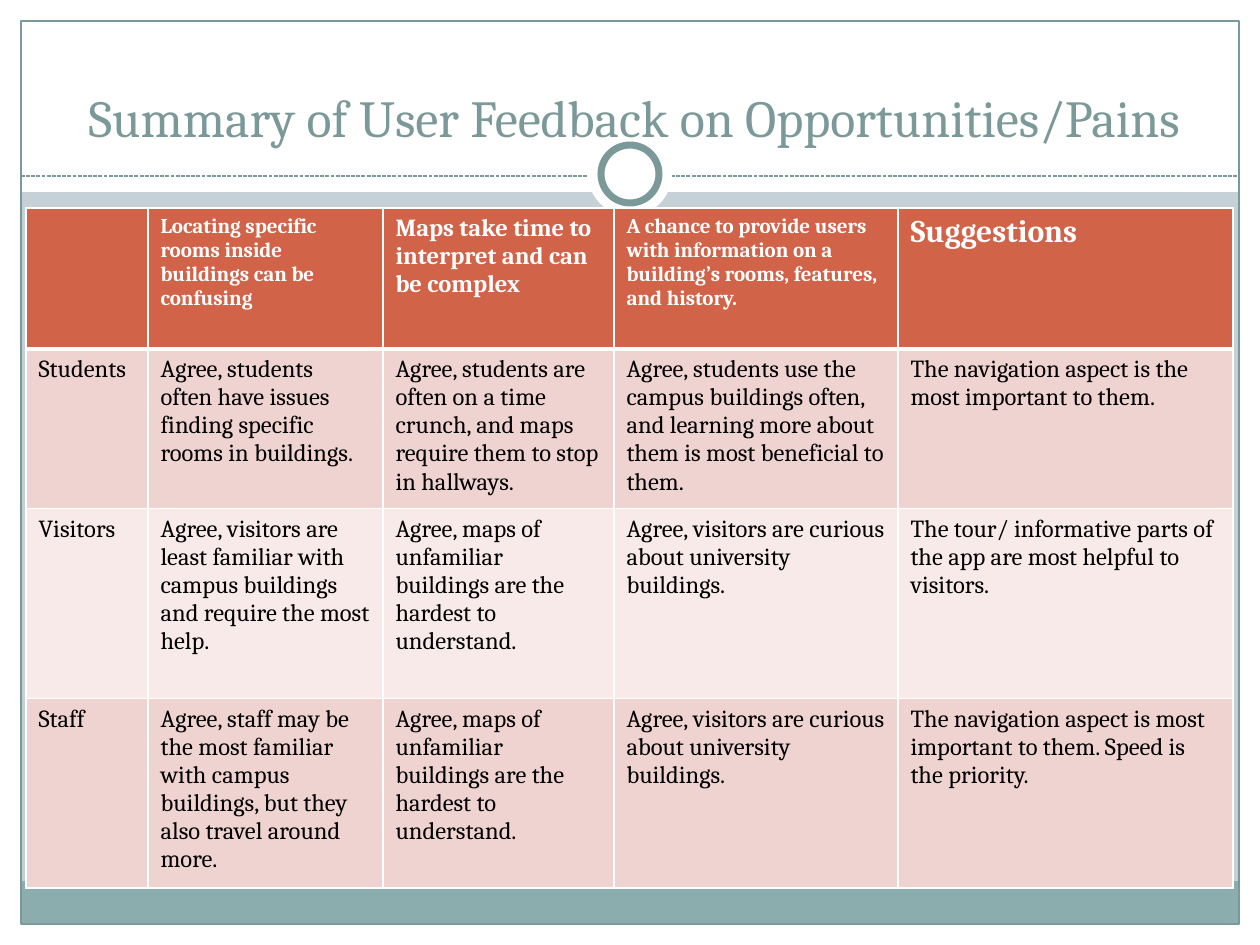
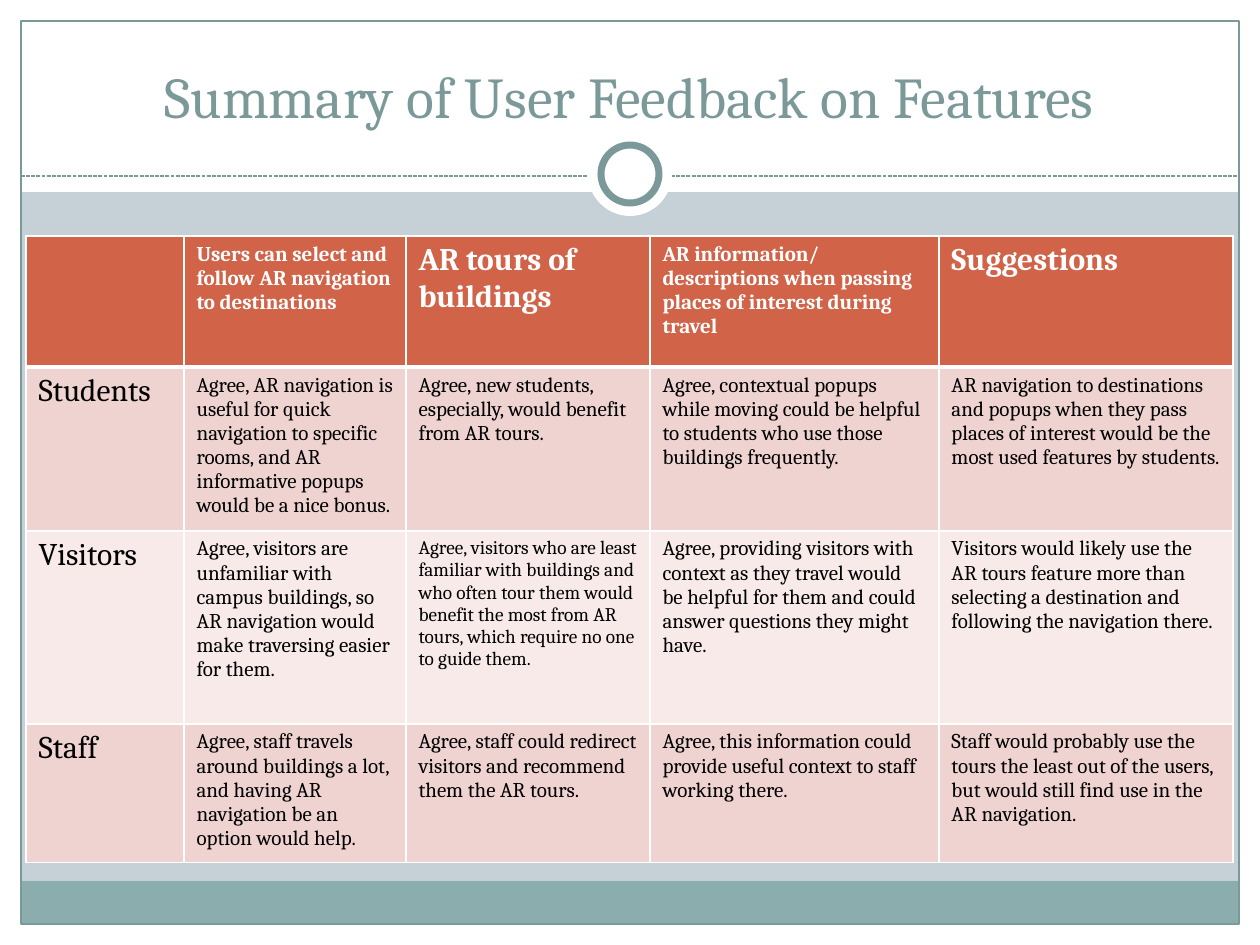
"""Build two slides that sum up user feedback in tables."""
from lxml import etree
from pptx import Presentation
from pptx.dml.color import RGBColor
from pptx.enum.dml import MSO_LINE
from pptx.enum.shapes import MSO_CONNECTOR, MSO_SHAPE
from pptx.enum.text import MSO_ANCHOR, PP_ALIGN
from pptx.oxml.ns import qn
from pptx.util import Pt

RECTANGLE, OVAL = MSO_SHAPE.RECTANGLE, MSO_SHAPE.OVAL
STRAIGHT, DASHED = MSO_CONNECTOR.STRAIGHT, MSO_LINE.SQUARE_DOT
BOTTOM, CENTER = MSO_ANCHOR.BOTTOM, PP_ALIGN.CENTER

FONT = "Cambria"
WHITE, BLACK = "FFFFFF", "000000"
BACKGROUND, TEAL, FOOTER = "C5D1D7", "7C999A", "8CADAE"
HEADER, ODD_ROW, EVEN_ROW = "D16349", "EED3D0", "F7EAE9"

EMU_PER_PX = 914400 / 126
WIDTH, HEIGHT = 1260, 945
MARGIN = 21
TITLE_BAND, RULE_Y = 192, 176
FOOTER_TOP, FOOTER_HEIGHT = 881, 43
RING_Y, DISC_SIZE, RING_SIZE = 174, 84, 58
TITLE_WIDTH, TITLE_HEIGHT = 1176, 105
TABLE_LEFT = 26

SLIDES = [
    {
        "title": "Summary of User Feedback on Opportunities/Pains",
        "title_size": 29.7,
        "title_at": (47, 49),
        "table_top": 208,
        "columns": [122, 235, 231, 284, 335],
        "rows": [141, 153, 190, 182],
        "header_sizes": [12, 12, 14, 12, 18],
        "label_size": 14,
        "body_size": 14,
        "special_sizes": {},
        "cells": [
            ["",
             "Locating specific rooms inside buildings can be confusing",
             "Maps take time to interpret and can be complex",
             "A chance to provide users with information on a building’s rooms, features, and history.",
             "Suggestions"],
            ["Students",
             "Agree, students often have issues finding specific rooms in buildings.",
             "Agree, students are often on a time crunch, and maps require them to stop in hallways.",
             "Agree, students use the campus buildings often, and learning more about them is most beneficial to them.",
             "The navigation aspect is the most important to them."],
            ["Visitors",
             "Agree, visitors are least familiar with campus buildings and require the most help.",
             "Agree, maps of unfamiliar buildings are the hardest to understand.",
             "Agree, visitors are curious about university buildings.",
             "The tour/ informative parts of the app are most helpful to visitors."],
            ["Staff",
             "Agree, staff may be the most familiar with campus buildings, but they also travel around more.",
             "Agree, maps of unfamiliar buildings are the hardest to understand.",
             "Agree, visitors are curious about university buildings.",
             "The navigation aspect is most important to them. Speed is the priority."],
        ],
    },
    {
        "title": "Summary of User Feedback on Features",
        "title_size": 33,
        "title_at": (41, 31),
        "table_top": 236,
        "columns": [158, 222, 244, 289, 294],
        "rows": [131, 158, 193, 134],
        "header_sizes": [12, 12, 18, 12, 18],
        "label_size": 18,
        "body_size": 12,
        "special_sizes": {(2, 2): 11},
        "cells": [
            ["",
             "Users can select and follow AR navigation to destinations",
             "AR tours of buildings",
             "AR information/ descriptions when passing places of interest during travel",
             "Suggestions"],
            ["Students",
             "Agree, AR navigation is useful for quick navigation to specific rooms, and AR informative popups would be a nice bonus.",
             "Agree, new students, especially, would benefit from AR tours.",
             "Agree, contextual popups while moving could be helpful to students who use those buildings frequently.",
             "AR navigation to destinations and popups when they pass places of interest would be the most used features by students."],
            ["Visitors",
             "Agree, visitors are unfamiliar with campus buildings, so AR navigation would make traversing easier for them.",
             "Agree, visitors who are least familiar with buildings and who often tour them would benefit the most from AR tours, which require no one to guide them.",
             "Agree, providing visitors with context as they travel would be helpful for them and could answer questions they might have.",
             "Visitors would likely use the AR tours feature more than selecting a destination and following the navigation there."],
            ["Staff",
             "Agree, staff travels around buildings a lot, and having AR navigation be an option would help.",
             "Agree, staff could redirect visitors and recommend them the AR tours.",
             "Agree, this information could provide useful context to staff working there.",
             "Staff would probably use the tours the least out of the users, but would still find use in the AR navigation."],
        ],
    },
]


def px(*lengths):
    return [round(length * EMU_PER_PX) for length in lengths]


def color(value):
    return RGBColor.from_string(value)


def paint(fill, value):
    fill.solid()
    fill.fore_color.rgb = color(value)


def stroke(line, value, width):
    line.color.rgb = color(value)
    line.width = Pt(width)


def style(paragraph, size, value, bold=False):
    font = paragraph.font
    font.name, font.size, font.bold = FONT, Pt(size), bold
    font.color.rgb = color(value)


def add_block(page, kind, frame, fill=None, line=None, line_width=0.75):
    shape = page.shapes.add_shape(kind, *px(*frame))
    shape.shadow.inherit = False
    if fill:
        paint(shape.fill, fill)
    else:
        shape.fill.background()
    if line:
        stroke(shape.line, line, line_width)
    else:
        shape.line.fill.background()


def add_disc(page, size, **look):
    add_block(page, OVAL, ((WIDTH - size) / 2, RING_Y - size / 2, size, size), **look)


def add_backdrop(page):
    paint(page.background.fill, BACKGROUND)
    inner_width = WIDTH - 2 * MARGIN
    for frame in [
        (0, HEIGHT - MARGIN, WIDTH, MARGIN),
        (0, 0, WIDTH, TITLE_BAND),
        (0, 0, MARGIN, HEIGHT),
        (WIDTH - MARGIN, 0, MARGIN, HEIGHT),
    ]:
        add_block(page, RECTANGLE, frame, fill=WHITE)
    add_block(page, RECTANGLE, (MARGIN, FOOTER_TOP, inner_width, FOOTER_HEIGHT), fill=FOOTER)
    add_block(page, RECTANGLE, (MARGIN, MARGIN, inner_width, HEIGHT - 2 * MARGIN), line=TEAL)
    rule = page.shapes.add_connector(STRAIGHT, *px(MARGIN, RULE_Y, WIDTH - MARGIN, RULE_Y))
    stroke(rule.line, TEAL, 0.75)
    rule.line.dash_style = DASHED
    etree.SubElement(rule._element.spPr, qn("a:effectLst"))
    add_disc(page, DISC_SIZE, fill=WHITE)
    add_disc(page, RING_SIZE, fill=WHITE, line=TEAL, line_width=4)


def add_title(page, content):
    box = page.shapes.add_textbox(*px(*content["title_at"], TITLE_WIDTH, TITLE_HEIGHT))
    frame = box.text_frame
    frame.word_wrap = True
    frame.vertical_anchor = BOTTOM
    paragraph = frame.paragraphs[0]
    paragraph.text = content["title"]
    paragraph.alignment = CENTER
    style(paragraph, content["title_size"], TEAL)


def set_borders(cell, top, bottom):
    properties = cell._tc.get_or_add_tcPr()
    sides = [("lnL", 1), ("lnR", 1), ("lnT", top), ("lnB", bottom)]
    for position, (side, width) in enumerate(sides):
        border = etree.Element(qn(f"a:{side}"), w=str(Pt(width)))
        fill = etree.SubElement(border, qn("a:solidFill"))
        etree.SubElement(fill, qn("a:srgbClr"), val=WHITE)
        properties.insert(position, border)


def text_size(content, row, column):
    if row == 0:
        return content["header_sizes"][column]
    if column == 0:
        return content["label_size"]
    return content["special_sizes"].get((row, column), content["body_size"])


def add_feedback_table(page, content):
    columns, rows = content["columns"], content["rows"]
    frame = px(TABLE_LEFT, content["table_top"], sum(columns), sum(rows))
    table = page.shapes.add_table(len(rows), len(columns), *frame).table
    for column, width in zip(table.columns, px(*columns)):
        column.width = width
    for row, height in zip(table.rows, px(*rows)):
        row.height = height
    for row, texts in enumerate(content["cells"]):
        is_header = row == 0
        fill = HEADER if is_header else ODD_ROW if row % 2 else EVEN_ROW
        for column, text in enumerate(texts):
            cell = table.cell(row, column)
            paint(cell.fill, fill)
            set_borders(cell, top=3 if row == 1 else 1, bottom=3 if is_header else 1)
            paragraph = cell.text_frame.paragraphs[0]
            paragraph.text = text
            style(paragraph, text_size(content, row, column),
                  WHITE if is_header else BLACK, bold=is_header)


def main():
    deck = Presentation()
    deck.slide_width, deck.slide_height = px(WIDTH, HEIGHT)
    for content in SLIDES:
        page = deck.slides.add_slide(deck.slide_layouts[6])
        add_backdrop(page)
        add_title(page, content)
        add_feedback_table(page, content)
    deck.save("out.pptx")


if __name__ == "__main__":
    main()
